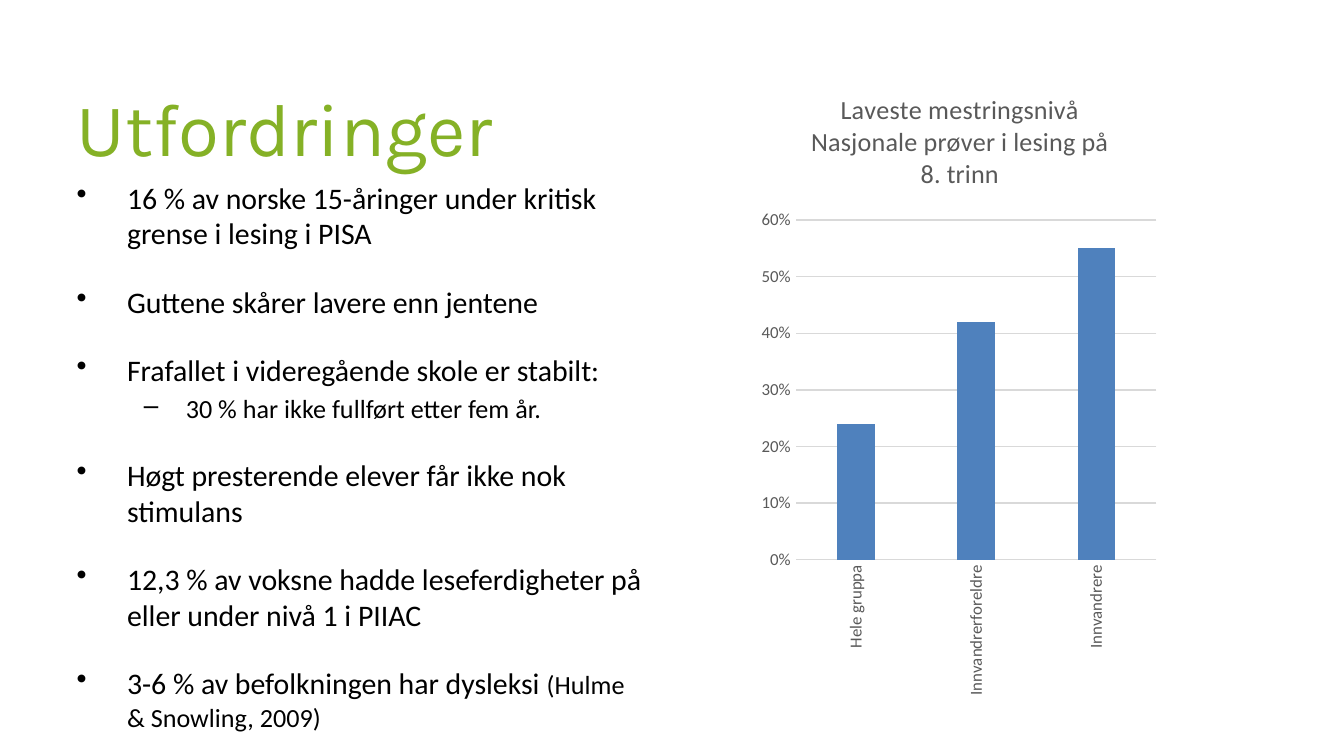
import lxml.etree
import pptx
import pptx.chart.data
import pptx.dml.color
import pptx.enum.chart
import pptx.enum.text
import pptx.oxml
import pptx.oxml.ns
import pptx.util
from dataclasses import dataclass

Pt = pptx.util.Pt


@dataclass
class Theme:
    heading_font: str = "Karla"
    body_font: str = "Calibri"
    green: str = "85B126"
    black: str = "000000"
    grey: str = "595959"
    rule: str = "D9D9D9"
    bar: str = "4F81BD"
    heading_size: float = 40
    body_size: float = 16
    small_size: float = 14
    axis_size: float = 9


def rgb(value):
    return pptx.dml.color.RGBColor.from_string(value)


def set_format(target, values):
    for name, value in values.items():
        setattr(target, name, value)


class SlideBuilder:
    def __init__(self, slide, theme):
        self.slide = slide
        self.theme = theme

    def font(self, font, size, color, name=None):
        set_format(font, {"name": name or self.theme.body_font, "size": Pt(size), "bold": False})
        font.color.rgb = rgb(color)

    def frame(self, left, top, width, height, anchor):
        box = self.slide.shapes.add_textbox(Pt(left), Pt(top), Pt(width), Pt(height))
        set_format(box.text_frame, {"word_wrap": True, "vertical_anchor": anchor})
        return box.text_frame

    def heading(self, text, *place):
        frame = self.frame(*place, pptx.enum.text.MSO_ANCHOR.MIDDLE)
        span = frame.paragraphs[0].add_run()
        span.text = text
        self.font(span.font, self.theme.heading_size, self.theme.green, self.theme.heading_font)

    def bullets(self, items, *place):
        frame = self.frame(*place, pptx.enum.text.MSO_ANCHOR.TOP)
        styles = {
            0: {"symbol": "•", "margin": 27, "hang": 27, "before": 17.5},
            1: {"symbol": "–", "margin": 58.5, "hang": 22.5, "before": 2.5},
        }
        for index, (level, spans) in enumerate(items):
            para = frame.paragraphs[0] if index == 0 else frame.add_paragraph()
            style = styles[level]
            set_format(para, {"level": level, "space_before": Pt(style["before"] if index else 0)})
            properties = para._p.get_or_add_pPr()
            properties.set("marL", str(Pt(style["margin"])))
            properties.set("indent", str(-Pt(style["hang"])))
            bullet = lxml.etree.SubElement(properties, pptx.oxml.ns.qn("a:buChar"))
            bullet.set("char", style["symbol"])
            for text, size in spans:
                span = para.add_run()
                span.text = text
                self.font(span.font, size, self.theme.black)

    def column_chart(self, title, values, plot_area, *place):
        theme = self.theme
        data = pptx.chart.data.CategoryChartData(number_format="0%")
        data.categories = list(values)
        data.add_series("Series 1", list(values.values()))
        kind = pptx.enum.chart.XL_CHART_TYPE.COLUMN_CLUSTERED
        chart = self.slide.shapes.add_chart(kind, *map(Pt, place), data).chart
        self.font(chart.font, 10, theme.black)
        set_format(chart, {"has_legend": False, "has_title": True})
        span = chart.chart_title.text_frame.paragraphs[0].add_run()
        span.text = title
        self.font(span.font, theme.small_size, theme.grey)
        chart.chart_title.include_in_layout = False

        plot = chart.plots[0]
        set_format(plot, {"gap_width": 219, "overlap": -27, "vary_by_categories": False})
        fill = plot.series[0].format.fill
        fill.solid()
        fill.fore_color.rgb = rgb(theme.bar)

        for axis in (chart.category_axis, chart.value_axis):
            no_mark = pptx.enum.chart.XL_TICK_MARK.NONE
            set_format(axis, {"major_tick_mark": no_mark, "minor_tick_mark": no_mark})
            self.font(axis.tick_labels.font, theme.axis_size, theme.grey)
        category, value = chart.category_axis, chart.value_axis
        category._element.txPr.find(pptx.oxml.ns.qn("a:bodyPr")).set("rot", "-5400000")
        set_format(value, {"minimum_scale": 0, "maximum_scale": 0.6, "major_unit": 0.1})
        set_format(value.tick_labels, {"number_format": "0%", "number_format_is_linked": False})
        value.format.line.fill.background()
        for line in (category.format.line, value.major_gridlines.format.line):
            line.color.rgb = rgb(theme.rule)
            line.width = Pt(0.75)
        self.place_plot(chart, plot_area)

    def place_plot(self, chart, plot_area):
        qn = pptx.oxml.ns.qn
        area = chart._chartSpace.chart.plotArea
        for old in area.findall(qn("c:layout")):
            area.remove(old)
        layout = pptx.oxml.parse_xml(f"<c:layout {pptx.oxml.ns.nsdecls('c')}><c:manualLayout/></c:layout>")
        settings = {"layoutTarget": "inner", "xMode": "edge", "yMode": "edge", **plot_area}
        for name, value in settings.items():
            lxml.etree.SubElement(layout[0], qn(f"c:{name}")).set("val", str(value))
        area.insert(0, layout)


def main():
    deck = pptx.Presentation()
    set_format(deck, {"slide_width": Pt(720), "slide_height": Pt(405)})
    theme = Theme()
    page = SlideBuilder(deck.slides.add_slide(deck.slide_layouts[6]), theme)
    normal, small = theme.body_size, theme.small_size

    page.heading("Utfordringer", 34, 34, 648, 67.5)
    page.bullets(
        [
            (0, [("16 % av norske 15-åringer under kritisk grense i lesing i PISA", normal)]),
            (0, [("Guttene skårer lavere enn jentene", normal)]),
            (0, [("Frafallet i videregående skole er stabilt:", normal)]),
            (1, [("30 % har ikke fullført etter fem år.", small)]),
            (0, [("Høgt presterende elever får ikke nok stimulans", normal)]),
            (0, [("12,3 % av voksne hadde leseferdigheter på eller under nivå 1 i PIIAC", normal)]),
            (0, [("3-6 % av befolkningen har dysleksi ", normal), ("(Hulme & Snowling, 2009)", small)]),
        ],
        34, 92.5, 318, 312.5,
    )
    page.column_chart(
        "Laveste mestringsnivå Nasjonale prøver i lesing på 8. trinn",
        {"Hele gruppa": 0.24, "Innvandrerforeldre": 0.42, "Innvandrere": 0.55},
        {"x": 0.1, "y": 0.24, "w": 0.88, "h": 0.53},
        404.5, 35.5, 219.5, 343.5,
    )
    deck.save("out.pptx")


if __name__ == "__main__":
    main()
